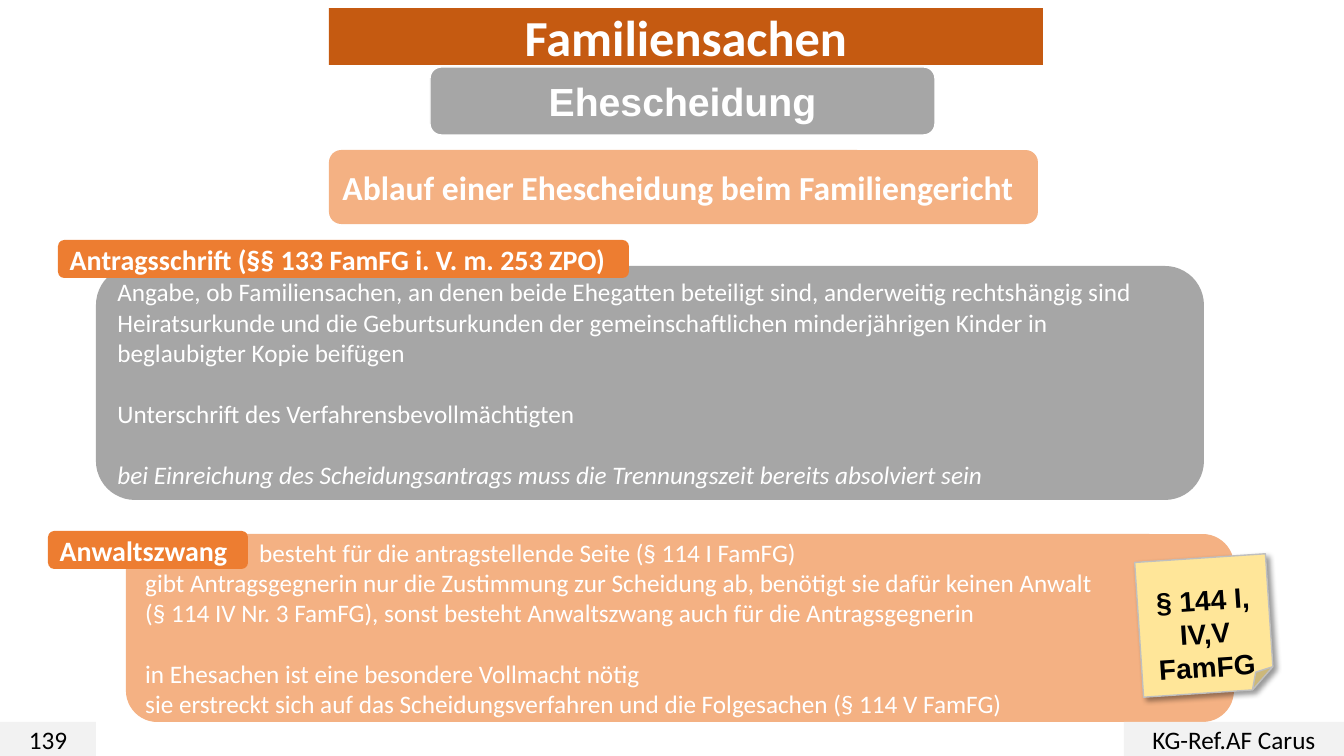
from lxml import etree
from pptx import Presentation
from pptx.dml.color import RGBColor
from pptx.enum.shapes import MSO_SHAPE
from pptx.enum.text import MSO_ANCHOR, MSO_AUTO_SIZE, PP_ALIGN
from pptx.oxml import parse_xml
from pptx.oxml.ns import nsdecls, qn
from pptx.util import Pt

PX = 914400 / 100.8
ROUND, RECT, NOTE = MSO_SHAPE.ROUNDED_RECTANGLE, MSO_SHAPE.RECTANGLE, MSO_SHAPE.FOLDED_CORNER
LEFT, CENTER = PP_ALIGN.LEFT, PP_ALIGN.CENTER
MIDDLE, NO_AUTOFIT = MSO_ANCHOR.MIDDLE, MSO_AUTO_SIZE.NONE
COLORS = {
    "rust": "C55A11", "orange": "ED7D31", "peach": "F4B183", "gray": "A6A6A6",
    "footer": "F2F2F2", "note": "FFE699", "edge": "BFBFBF",
    "white": "FFFFFF", "black": "000000",
}


def px(length):
    return round(length * PX)


def style(box, place, fill, lines, size, color="white", bold=False, align=LEFT, font="Calibri"):
    """Place and fill a box, then write its lines; an empty line becomes a gap."""
    box.left, box.top, box.width, box.height = map(px, place)
    if box.is_placeholder:
        box.element.spPr.find(qn("a:xfrm")).addnext(parse_xml(
            f'<a:prstGeom {nsdecls("a")} prst="roundRect"><a:avLst/></a:prstGeom>'))
    box.fill.solid()
    box.fill.fore_color.rgb = RGBColor.from_string(COLORS[fill])
    box.line.fill.background()
    frame = box.text_frame
    frame.word_wrap, frame.auto_size, frame.vertical_anchor = True, NO_AUTOFIT, MIDDLE
    frame.text = "\n".join(line for line in lines if line)
    texts = [i for i, line in enumerate(lines) if line]
    for para, i in zip(frame.paragraphs, texts):
        if box.is_placeholder:
            props = para._p.get_or_add_pPr()
            props.set("marL", "0")
            props.set("indent", "0")
            etree.SubElement(props, qn("a:buNone"))
        para.alignment = align
        para.space_before = Pt(22 if i and not lines[i - 1] else 0)
        para.font.name, para.font.size, para.font.bold = font, Pt(size), bold
        para.font.color.rgb = RGBColor.from_string(COLORS[color])


deck = Presentation()
deck.slide_width, deck.slide_height = px(1344), px(756)
page = deck.slides.add_slide(deck.slide_layouts[3])
title, petition, lawyer = page.placeholders

# Title and the two text panels
style(title, (329, 8, 714, 57), "rust", ["Familiensachen"], 36, bold=True, align=CENTER)
style(petition, (96, 266, 1108, 234), "gray", [
    "Angabe, ob Familiensachen, an denen beide Ehegatten beteiligt sind, anderweitig rechtshängig sind",
    "Heiratsurkunde und die Geburtsurkunden der gemeinschaftlichen minderjährigen Kinder in beglaubigter Kopie beifügen",
    "",
    "Unterschrift des Verfahrensbevollmächtigten",
    "",
    "bei Einreichung des Scheidungsantrags muss die Trennungszeit bereits absolviert sein",
], 18)
petition.text_frame.paragraphs[-1].font.italic = True
style(lawyer, (126, 534, 1108, 188), "peach", [
    "besteht für die antragstellende Seite (§ 114 I FamFG)",
    "gibt Antragsgegnerin nur die Zustimmung zur Scheidung ab, benötigt sie dafür keinen Anwalt",
    "(§ 114 IV Nr. 3 FamFG), sonst besteht Anwaltszwang auch für die Antragsgegnerin",
    "",
    "in Ehesachen ist eine besondere Vollmacht nötig",
    "sie erstreckt sich auf das Scheidungsverfahren und die Folgesachen (§ 114 V FamFG)",
], 18)
# The first line starts to the right of the "Anwaltszwang" tag
lawyer.text_frame.paragraphs[0]._p.pPr.set("indent", str(px(114)))

# Headings, tags, footer and sticky note
labels = [
    (ROUND, (430, 67, 505, 68), "gray", "Ehescheidung", 28, "white", True, CENTER, "Arial"),
    (ROUND, (329, 150, 709, 74), "peach", "Ablauf einer Ehescheidung beim Familiengericht",
     24, "white", True, LEFT, "Calibri"),
    (ROUND, (58, 240, 571, 38), "orange", "Antragsschrift (§§ 133 FamFG i. V. m. 253 ZPO)",
     20, "white", True, LEFT, "Calibri"),
    (ROUND, (48, 531, 200, 38), "orange", "Anwaltszwang", 20, "white", True, LEFT, "Calibri"),
    (RECT, (0, 722, 96, 34), "footer", "139", 18, "black", False, CENTER, "Calibri"),
    (RECT, (1124, 722, 220, 34), "footer", "KG-Ref.AF Carus", 18, "black", False, CENTER, "Calibri"),
    (NOTE, (1139, 558, 131, 135), "note", "§ 144 I, IV,V FamFG", 20, "black", True, CENTER, "Arial"),
]
boxes = {}
for kind, place, fill, text, *look in labels:
    box = page.shapes.add_shape(kind, *map(px, place))
    box.shadow.inherit = False
    style(box, place, fill, [text], *look)
    boxes[text] = box

# Outlines
note = boxes["§ 144 I, IV,V FamFG"]
for box, color in ((boxes["Ehescheidung"], "white"), (note, "edge")):
    box.line.color.rgb = RGBColor.from_string(COLORS[color])
    box.line.width = Pt(1)

# Tilt, text offset and soft shadow of the sticky note
note.rotation = 356.2
note.text_frame.margin_top, note.text_frame.margin_bottom = px(37), 0
note.element.spPr.find(qn("a:effectLst")).append(parse_xml(
    f'<a:outerShdw {nsdecls("a")} blurRad="{Pt(4)}" dist="{Pt(3)}" dir="2700000" algn="tl" rotWithShape="0">'
    f'<a:srgbClr val="{COLORS["black"]}"><a:alpha val="40000"/></a:srgbClr></a:outerShdw>'))

deck.save("out.pptx")
